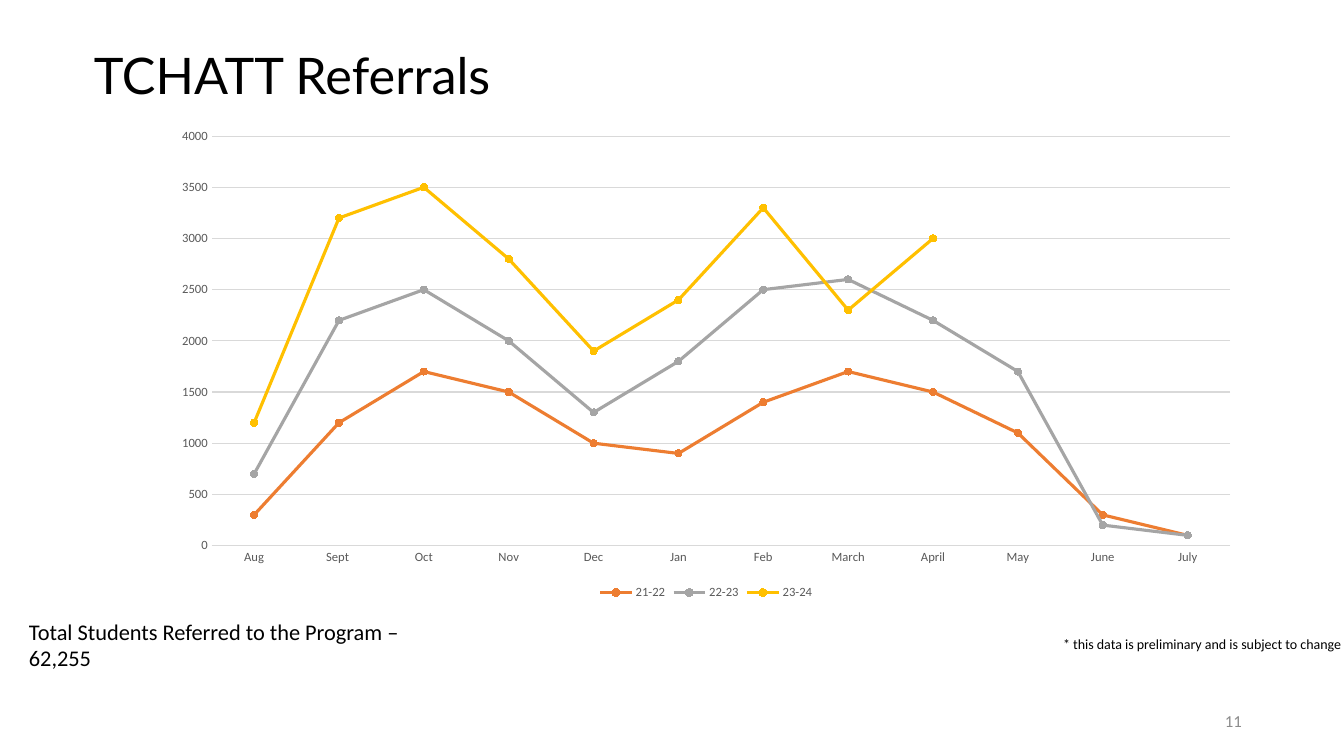
import pptx
import pptx.chart.data
import pptx.dml.color
import pptx.enum.chart
import pptx.enum.text
import pptx.util

Cm, Pt = pptx.util.Cm, pptx.util.Pt
RGBColor = pptx.dml.color.RGBColor
ALIGN = pptx.enum.text.PP_ALIGN
ANCHOR = pptx.enum.text.MSO_ANCHOR
XL = pptx.enum.chart

BLACK = RGBColor(0x00, 0x00, 0x00)
NUMBER_GREY = RGBColor(0x8C, 0x8C, 0x8C)
LABEL_GREY = RGBColor(0x59, 0x59, 0x59)
RULE_GREY = RGBColor(0xD9, 0xD9, 0xD9)
ORANGE = RGBColor(0xED, 0x7D, 0x31)
GREY = RGBColor(0xA5, 0xA5, 0xA5)
GOLD = RGBColor(0xFF, 0xC0, 0x00)

# Content
TITLE = "TCHATT Referrals"
TITLE_BOX = (2.11, 0.99, 26.87, 1.8)
TITLE_FONT = {"name": "Lato", "size": Pt(36)}

# text, (left, top, width, height) in cm, size, colour, alignment, anchor
NOTES = [
    ("Total Students Referred to the Program – 62,255",
     (0.48, 15.44, 11.48, 0.94), 16, BLACK, ALIGN.LEFT, ANCHOR.TOP),
    ("*\u00a0this data is preliminary and is subject to change".replace("\u00a0", " "),
     (26.54, 15.9, 7.62, 0.69), 10, BLACK, ALIGN.LEFT, ANCHOR.TOP),
    ("11", (23.93, 17.65, 7.62, 1.02), 12, NUMBER_GREY, ALIGN.RIGHT, ANCHOR.MIDDLE),
]

CHART_BOX = (4.04, 3.0, 27.51, 12.22)
MONTHS = ["Aug", "Sept ", "Oct", "Nov", "Dec", "Jan",
          "Feb", "March", "April", "May", "June", "July"]
REFERRALS = [
    ("21-22", ORANGE, [300, 1200, 1700, 1500, 1000, 900, 1400, 1700, 1500, 1100, 300, 100]),
    ("22-23", GREY, [700, 2200, 2500, 2000, 1300, 1800, 2500, 2600, 2200, 1700, 200, 100]),
    ("23-24", GOLD, [1200, 3200, 3500, 2800, 1900, 2400, 3300, 2300, 3000, None, None, None]),
]
LABEL_FONT = {"name": "Calibri", "size": Pt(9), "bold": False}


def set_attrs(target, values):
    for name, value in values.items():
        setattr(target, name, value)


def set_font(font, values, color):
    set_attrs(font, values)
    font.color.rgb = color


def set_line(line, color, width):
    line.color.rgb = color
    line.width = Pt(width)


def place(sp, box):
    set_attrs(sp, dict(zip(("left", "top", "width", "height"), map(Cm, box))))


def write(sp, text, font, color, align, anchor):
    tf = sp.text_frame
    set_attrs(tf, {"word_wrap": True, "vertical_anchor": anchor})
    p = tf.paragraphs[0]
    p.alignment = align
    r = p.add_run()
    r.text = text
    set_font(r.font, font, color)


def add_referral_chart(s):
    data = pptx.chart.data.CategoryChartData()
    data.categories = MONTHS
    for name, _, values in REFERRALS:
        data.add_series(name, values)
    chart = s.shapes.add_chart(XL.XL_CHART_TYPE.LINE_MARKERS,
                               *map(Cm, CHART_BOX), data).chart
    set_font(chart.font, {"name": "Calibri", "size": Pt(10)}, BLACK)
    chart.has_title = False
    chart.plots[0].vary_by_categories = False

    # Lines and markers
    for series, (_, color, _) in zip(chart.plots[0].series, REFERRALS):
        series.smooth = False
        set_line(series.format.line, color, 2.25)
        set_attrs(series.marker, {"style": XL.XL_MARKER_STYLE.CIRCLE, "size": 5})
        series.marker.format.fill.solid()
        series.marker.format.fill.fore_color.rgb = color
        set_line(series.marker.format.line, color, 0.75)

    # Axes and gridlines
    months, counts = chart.category_axis, chart.value_axis
    for axis in (months, counts):
        set_attrs(axis, {"major_tick_mark": XL.XL_TICK_MARK.NONE,
                         "minor_tick_mark": XL.XL_TICK_MARK.NONE})
        set_font(axis.tick_labels.font, LABEL_FONT, LABEL_GREY)
    set_line(months.format.line, RULE_GREY, 0.75)
    set_attrs(counts, {"minimum_scale": 0, "maximum_scale": 4000, "major_unit": 500,
                       "has_major_gridlines": True})
    counts.format.line.fill.background()
    set_line(counts.major_gridlines.format.line, RULE_GREY, 0.75)

    # Legend
    chart.has_legend = True
    set_attrs(chart.legend, {"position": XL.XL_LEGEND_POSITION.BOTTOM,
                             "include_in_layout": False})
    set_font(chart.legend.font, LABEL_FONT, LABEL_GREY)


def main():
    prs = pptx.Presentation()
    set_attrs(prs, {"slide_width": Cm(33.87), "slide_height": Cm(19.05)})
    s = prs.slides.add_slide(prs.slide_layouts[5])

    # Title
    place(s.shapes.title, TITLE_BOX)
    write(s.shapes.title, TITLE, TITLE_FONT, BLACK, ALIGN.LEFT, ANCHOR.TOP)

    # Notes and page number
    for text, box, size, color, align, anchor in NOTES:
        sp = s.shapes.add_textbox(*map(Cm, box))
        write(sp, text, {"name": "Calibri", "size": Pt(size)}, color, align, anchor)

    add_referral_chart(s)
    prs.save("out.pptx")


if __name__ == "__main__":
    main()
